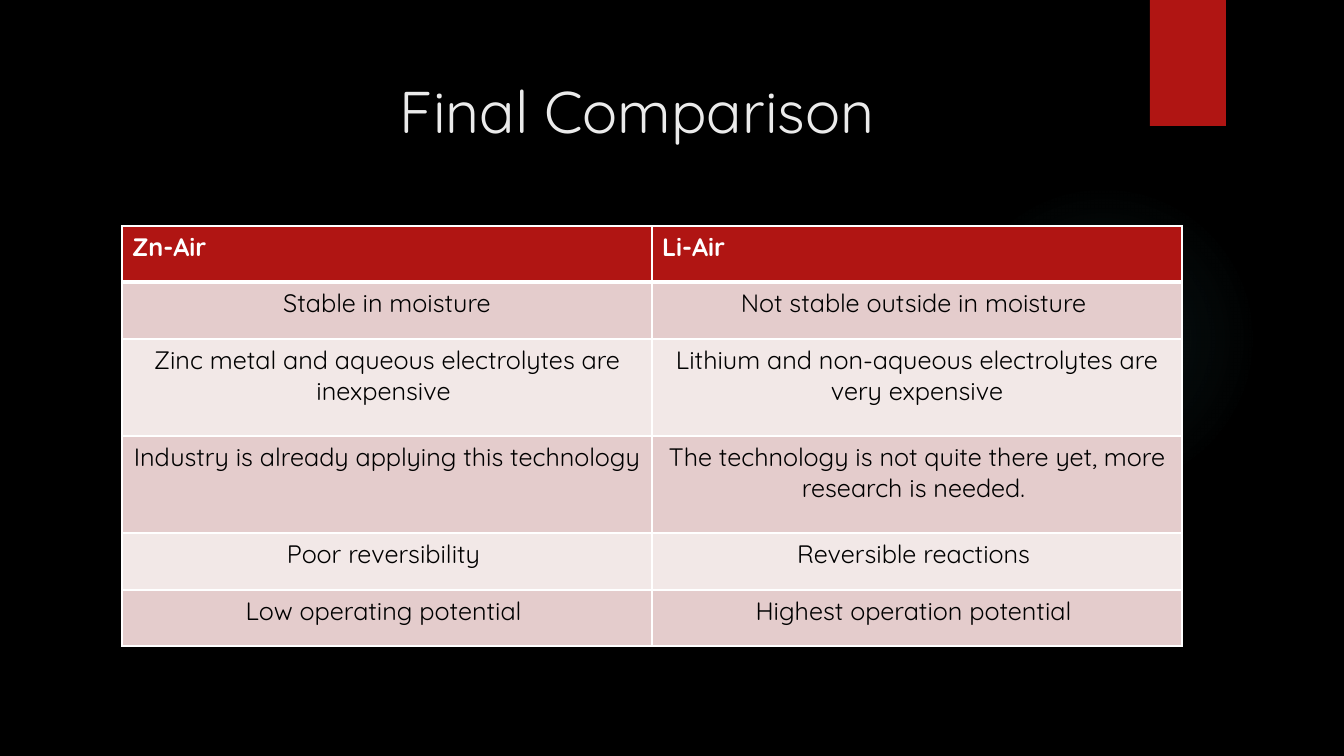
from dataclasses import dataclass

from lxml.etree import SubElement
from pptx import Presentation
from pptx.dml.color import RGBColor
from pptx.enum.shapes import MSO_SHAPE as Shape
from pptx.enum.text import MSO_ANCHOR as Anchor, PP_ALIGN as Align
from pptx.oxml.ns import qn
from pptx.util import Emu, Pt

TITLE = "Final Comparison "
COMPARISON = [
    ("Zn-Air", "Li-Air"),
    ("Stable in moisture", "Not stable outside in moisture "),
    ("Zinc metal and aqueous electrolytes are inexpensive ",
     "Lithium and non-aqueous electrolytes are very expensive"),
    ("Industry is already applying this technology",
     "The technology is not quite there yet, more research is needed. "),
    ("Poor reversibility ", "Reversible reactions "),
    ("Low operating potential ", "Highest operation potential "),
]
ROW_HEIGHTS = [56, 57, 97, 97, 57, 56]
COLUMN_WIDTH = 530
TABLE_LEFT, TABLE_TOP = 122, 226
TITLE_BOX = (354, 70, 582, 88)
RIBBON_BOX = (1150, 0, 76, 126)
GLOW_BOX = (949, 184, 310, 310)
GLOW_STOPS = [(0, 7), (36, 6), (69, 0)]


@dataclass(frozen=True)
class Theme:
    background: str = "000000"
    accent: str = "B01513"
    glow: str = "50B9C1"
    title: str = "EBEBEB"
    header_text: str = "FFFFFF"
    body_text: str = "000000"
    border: str = "FFFFFF"
    bands: tuple = ("F2E8E7", "E4CCCC")
    font: str = "Quicksand"
    title_size: int = 42
    table_size: int = 18


THEME = Theme()


def px(length):
    return Emu(round(length * 914400 / 100.8))


def paint(fill, color):
    fill.solid()
    fill.fore_color.rgb = RGBColor.from_string(color)


def write(frame, text, size, color, align, bold=False):
    paragraph = frame.paragraphs[0]
    paragraph.alignment = align
    run = paragraph.add_run()
    run.text = text
    run.font.name = THEME.font
    run.font.size = Pt(size)
    run.font.bold = bold
    run.font.color.rgb = RGBColor.from_string(color)


def add_plain_shape(slide, kind, box, color):
    shape = slide.shapes.add_shape(kind, *map(px, box))
    shape.shadow.inherit = False
    shape.line.fill.background()
    paint(shape.fill, color)
    return shape


def add_glow(slide):
    glow = add_plain_shape(slide, Shape.OVAL, GLOW_BOX, THEME.glow)
    properties = glow.fill._xPr
    solid = properties.find(qn("a:solidFill"))
    gradient = SubElement(properties, qn("a:gradFill"), rotWithShape="1")
    properties.replace(solid, gradient)
    stops = SubElement(gradient, qn("a:gsLst"))
    for position, opacity in GLOW_STOPS:
        stop = SubElement(stops, qn("a:gs"), pos=str(position * 1000))
        color = SubElement(stop, qn("a:srgbClr"), val=THEME.glow)
        SubElement(color, qn("a:alpha"), val=str(opacity * 1000))
    circle = SubElement(gradient, qn("a:path"))
    circle.set("path", "circle")
    SubElement(circle, qn("a:fillToRect"), l="50000", t="50000", r="50000", b="50000")


def add_borders(cell, bottom):
    properties = cell._tc.get_or_add_tcPr()
    for side, width in (("L", 1), ("R", 1), ("T", 1), ("B", bottom)):
        line = SubElement(properties, qn(f"a:ln{side}"), w=str(Pt(width)))
        fill = SubElement(line, qn("a:solidFill"))
        SubElement(fill, qn("a:srgbClr"), val=THEME.border)


def add_comparison(slide):
    columns = len(COMPARISON[0])
    table = slide.shapes.add_table(
        len(COMPARISON), columns, px(TABLE_LEFT), px(TABLE_TOP),
        px(COLUMN_WIDTH * columns), px(sum(ROW_HEIGHTS))).table
    for column in table.columns:
        column.width = px(COLUMN_WIDTH)
    for index, (entries, height) in enumerate(zip(COMPARISON, ROW_HEIGHTS)):
        header = index == 0
        table.rows[index].height = px(height)
        for side, entry in enumerate(entries):
            cell = table.cell(index, side)
            add_borders(cell, 3 if header else 1)
            paint(cell.fill, THEME.accent if header else THEME.bands[index % 2])
            write(cell.text_frame, entry, THEME.table_size,
                  THEME.header_text if header else THEME.body_text,
                  Align.LEFT if header else Align.CENTER, bold=header)


def main():
    deck = Presentation()
    deck.slide_width, deck.slide_height = px(1344), px(756)
    slide = deck.slides.add_slide(deck.slide_layouts[6])
    paint(slide.background.fill, THEME.background)
    add_glow(slide)
    add_plain_shape(slide, Shape.RECTANGLE, RIBBON_BOX, THEME.accent)
    heading = slide.shapes.add_textbox(*map(px, TITLE_BOX)).text_frame
    heading.word_wrap = True
    heading.vertical_anchor = Anchor.TOP
    write(heading, TITLE, THEME.title_size, THEME.title, Align.CENTER)
    add_comparison(slide)
    deck.save("out.pptx")


if __name__ == "__main__":
    main()
